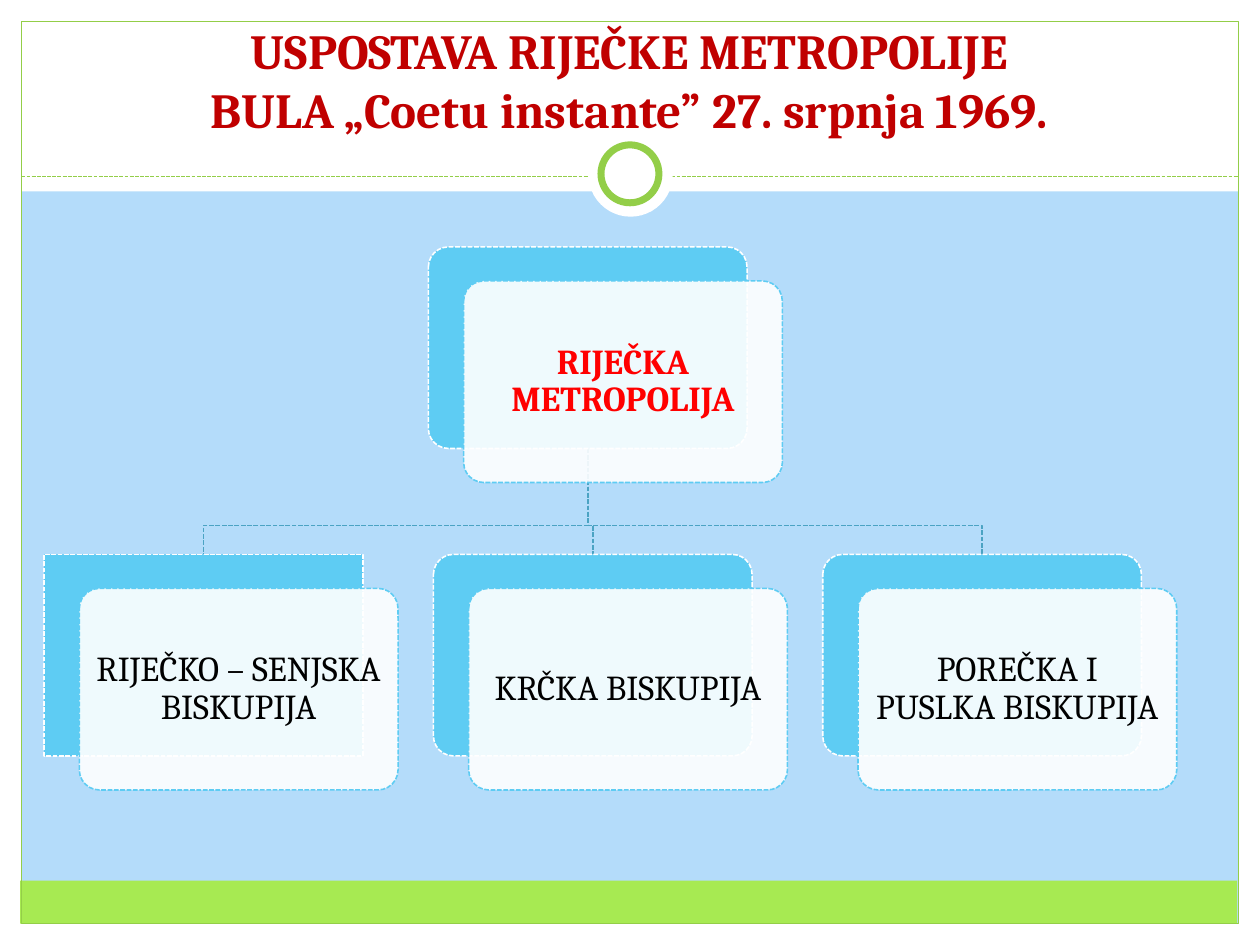
"""Builds a slide with the organisation chart of the Rijeka metropolis."""
from dataclasses import dataclass
from typing import Optional

from lxml.etree import SubElement
from pptx import Presentation
from pptx.dml.color import RGBColor
from pptx.enum.dml import MSO_LINE
from pptx.enum.shapes import MSO_CONNECTOR, MSO_SHAPE
from pptx.enum.text import MSO_ANCHOR, MSO_AUTO_SIZE, PP_ALIGN
from pptx.oxml.ns import qn
from pptx.util import Inches, Pt

WHITE = RGBColor(0xFF, 0xFF, 0xFF)
BLACK = RGBColor(0, 0, 0)
RED = RGBColor(0xFF, 0, 0)
DARK_RED = RGBColor(0xC0, 0, 0)
PALE_BLUE = RGBColor(0xB4, 0xDC, 0xFA)
SKY = RGBColor(0x5E, 0xCC, 0xF3)
TEAL = RGBColor(0x4B, 0xA3, 0xC3)
LIME = RGBColor(0xA7, 0xEA, 0x52)
GREEN = RGBColor(0x93, 0xCE, 0x48)

CARD_WIDTH, CARD_HEIGHT = 2.53, 1.6
CARD_OFFSET_X, CARD_OFFSET_Y = 0.28, 0.27
ROW_LEFT, ROW_TOP, ROW_STEP = 0.35, 4.4, 3.09
BRANCH_TOP = 4.17


@dataclass
class Card:
    label: str
    left: float
    top: float
    color: RGBColor = BLACK
    bold: bool = False
    back: MSO_SHAPE = MSO_SHAPE.ROUNDED_RECTANGLE

    @property
    def center(self) -> float:
        return self.left + CARD_WIDTH / 2


def style_line(line, color: RGBColor, width: float, dashed: bool = False) -> None:
    line.color.rgb = color
    line.width = Pt(width)
    if dashed:
        line.dash_style = MSO_LINE.SQUARE_DOT


def add_box(slide, kind: MSO_SHAPE, left: float, top: float, width: float, height: float,
            fill: Optional[RGBColor] = None, line: Optional[RGBColor] = None,
            line_width: float = 0.75, dashed: bool = False):
    box = slide.shapes.add_shape(kind, Inches(left), Inches(top), Inches(width), Inches(height))
    box.shadow.inherit = False
    if fill is None:
        box.fill.background()
    else:
        box.fill.solid()
        box.fill.fore_color.rgb = fill
    if line is None:
        box.line.fill.background()
    else:
        style_line(box.line, line, line_width, dashed)
    if kind == MSO_SHAPE.ROUNDED_RECTANGLE:
        box.adjustments[0] = 0.1
    return box


def write_text(frame, *lines: str, size: float, color: RGBColor, bold: bool = False,
               anchor: MSO_ANCHOR = MSO_ANCHOR.MIDDLE, spacing: float = 1.0) -> None:
    frame.word_wrap = True
    frame.auto_size = MSO_AUTO_SIZE.NONE
    frame.vertical_anchor = anchor
    para = frame.paragraphs[0]
    para.alignment = PP_ALIGN.CENTER
    para.line_spacing = spacing
    for index, line in enumerate(lines):
        if index:
            para.add_line_break()
        span = para.add_run()
        span.text = line
        span.font.name = "Cambria"
        span.font.size = Pt(size)
        span.font.bold = bold
        span.font.color.rgb = color


def add_card(slide, card: Card) -> None:
    add_box(slide, card.back, card.left, card.top, CARD_WIDTH, CARD_HEIGHT,
            SKY, WHITE, 0.9, dashed=True)
    front = add_box(slide, MSO_SHAPE.ROUNDED_RECTANGLE, card.left + CARD_OFFSET_X,
                    card.top + CARD_OFFSET_Y, CARD_WIDTH, CARD_HEIGHT,
                    WHITE, SKY, 0.9, dashed=True)
    fill_color = front.element.spPr.find(qn("a:solidFill"))[0]
    SubElement(fill_color, qn("a:alpha")).set("val", "90000")
    frame = front.text_frame
    frame.margin_left = frame.margin_right = Inches(0.08)
    frame.margin_top = frame.margin_bottom = Inches(0.08)
    write_text(frame, card.label, size=20, color=card.color, bold=card.bold, spacing=0.9)


def add_branch(slide, parent: Card, child: Card) -> None:
    builder = slide.shapes.build_freeform(
        Inches(parent.center), Inches(parent.top + CARD_HEIGHT))
    corners = [(parent.center, BRANCH_TOP), (child.center, BRANCH_TOP), (child.center, child.top)]
    builder.add_line_segments([(Inches(x), Inches(y)) for x, y in corners], close=False)
    branch = builder.convert_to_shape()
    branch.shadow.inherit = False
    branch.fill.background()
    style_line(branch.line, TEAL, 0.9, dashed=True)


def add_frame(slide) -> None:
    margins = [(0, 7.33, 10, 0.17), (0, 0, 10, 1.52), (0, 0, 0.17, 7.5), (9.83, 0, 0.17, 7.5)]
    for margin in margins:
        add_box(slide, MSO_SHAPE.RECTANGLE, *margin, fill=WHITE)
    add_box(slide, MSO_SHAPE.RECTANGLE, 0.16, 6.99, 9.66, 0.34, LIME)
    add_box(slide, MSO_SHAPE.RECTANGLE, 0.17, 0.17, 9.66, 7.16, line=GREEN)
    divider = slide.shapes.add_connector(
        MSO_CONNECTOR.STRAIGHT, Inches(0.17), Inches(1.4), Inches(9.83), Inches(1.4))
    style_line(divider.line, GREEN, 0.75, dashed=True)
    SubElement(divider.element.spPr, qn("a:effectLst"))
    add_box(slide, MSO_SHAPE.OVAL, 4.67, 1.05, 0.67, 0.67, WHITE)
    add_box(slide, MSO_SHAPE.OVAL, 4.77, 1.15, 0.46, 0.46, WHITE, GREEN, 4)


def add_title(slide) -> None:
    title = slide.shapes.title
    title.left, title.top = Inches(0.33), Inches(0)
    title.width, title.height = Inches(9.33), Inches(1.15)
    write_text(title.text_frame, "USPOSTAVA RIJEČKE METROPOLIJE",
               "BULA „Coetu instante” 27. srpnja 1969.",
               size=28, color=DARK_RED, bold=True, anchor=MSO_ANCHOR.BOTTOM)
    title.element.getparent().append(title.element)


def main() -> None:
    deck = Presentation()
    deck.slide_width, deck.slide_height = Inches(10), Inches(7.5)
    slide = deck.slides.add_slide(deck.slide_layouts[5])
    slide.background.fill.solid()
    slide.background.fill.fore_color.rgb = PALE_BLUE
    add_frame(slide)
    add_title(slide)

    metropolis = Card("RIJEČKA METROPOLIJA", 3.4, 1.96, RED, bold=True)
    labels = ["RIJEČKO – SENJSKA BISKUPIJA", "KRČKA BISKUPIJA", "POREČKA I PUSLKA BISKUPIJA"]
    dioceses = [Card(label, ROW_LEFT + index * ROW_STEP, ROW_TOP)
                for index, label in enumerate(labels)]
    dioceses[0].back = MSO_SHAPE.RECTANGLE
    for diocese in reversed(dioceses):
        add_branch(slide, metropolis, diocese)
    for card in [metropolis, *dioceses]:
        add_card(slide, card)
    deck.save("out.pptx")


if __name__ == "__main__":
    main()
